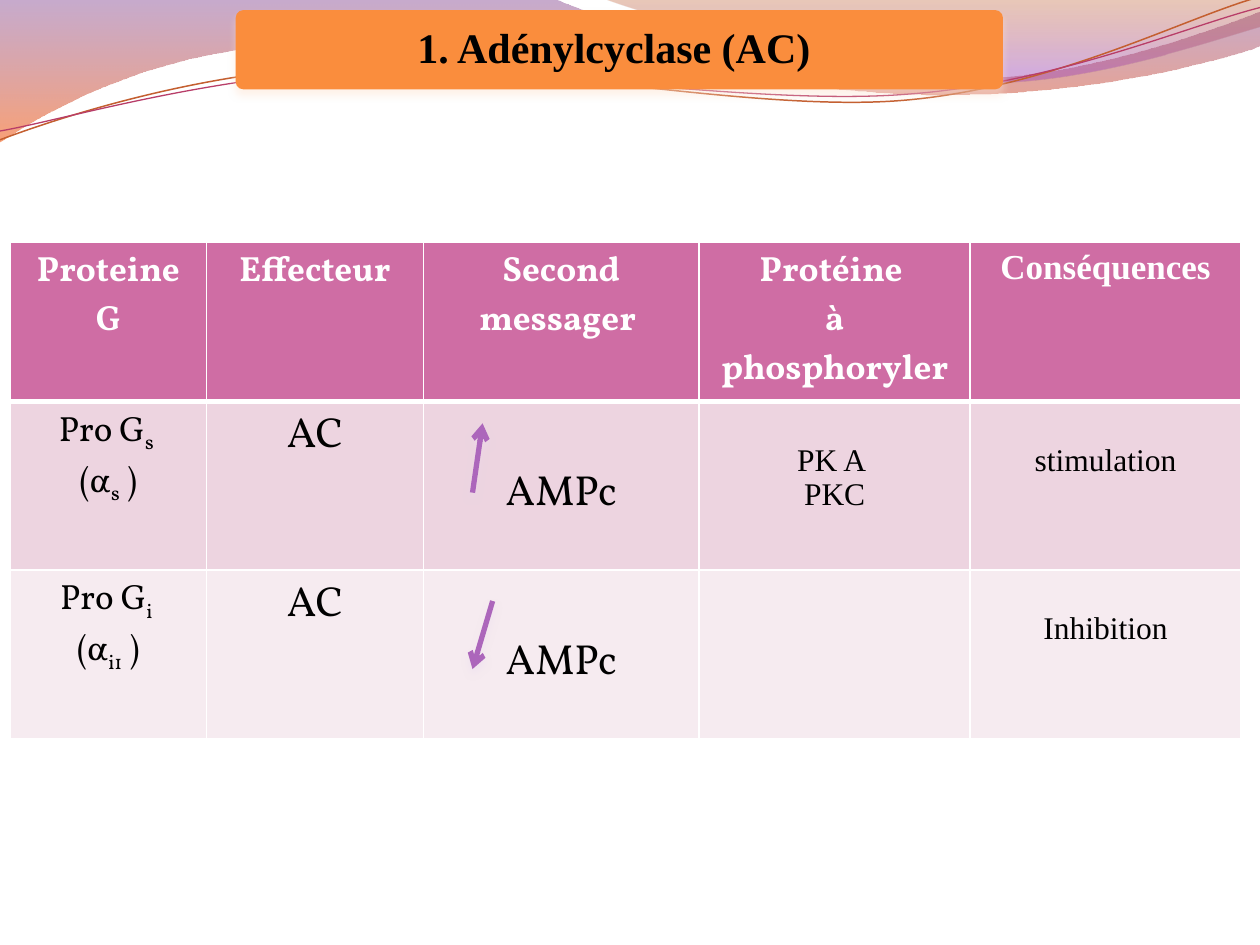
import pptx
import pptx.dml.color
import pptx.enum.shapes
import pptx.enum.text
import pptx.oxml
import pptx.oxml.ns
import pptx.util
from pptx.util import Inches

SERIF = "Times New Roman"
BOOK = "Vollkorn"
WHITE, BLACK = "FFFFFF", "000000"
NAMESPACE = pptx.oxml.ns.nsdecls("a")

LEFT_WAVE = [
    [(0, 0)], [(4.4, -0.01)],
    [(4.76, 0.17), (6.64, 0.63), (7.58, 0.63)],
    [(8.53, 0.63), (9.58, 0.26), (10, 0.09)],
    [(10.01, 0.36)],
    [(9.83, 0.44), (8.7, 0.76), (7.46, 0.75)],
    [(6.22, 0.75), (3.82, 0.28), (2.57, 0.34)],
    [(1.29, 0.36), (0.46, 0.83), (-0.01, 1.13)],
    [(0, 0)],
]
RIGHT_WAVE = [
    [(4.79, -0.01)],
    [(5.09, 0.11), (6.82, 0.62), (7.69, 0.65)],
    [(8.56, 0.69), (9.61, 0.32), (10, 0.21)],
    [(10, 0)], [(4.79, -0.01)],
]
ORANGE_CURVE = [
    [(0, 1.11)],
    [(0.48, 0.93), (1.58, 0.57), (2.77, 0.52)],
    [(3.95, 0.47), (5.93, 0.89), (7.13, 0.8)],
    [(8.33, 0.71), (9.38, 0.15), (9.98, -0.02)],
]
PINK_CURVE = [
    [(0, 1.04)],
    [(0.47, 0.96), (1.64, 0.61), (2.83, 0.56)],
    [(4.03, 0.51), (5.97, 0.84), (7.17, 0.75)],
    [(8.36, 0.67), (9.41, 0.21), (10, 0.06)],
]

COLUMN_WIDTHS = [1.56, 1.72, 2.19, 2.15, 2.15]
ROW_HEIGHTS = [1.26, 1.34, 1.34]
ROW_FILLS = ["CF6DA4", "EDD4E0", "F6EBF0"]
HEADER_FONTS = [BOOK, BOOK, BOOK, BOOK, SERIF]
BODY_STYLES = [(BOOK, 20, 0.05), (BOOK, 24, 0.05), (BOOK, 24, 0.51),
               (SERIF, 18, 0.33), (SERIF, 18, 0.33)]
TABLE_TEXT = [
    ["Proteine G", "Effecteur", "Second messager ",
     "Protéine \nà phosphoryler", "Conséquences"],
    ["Pro G_s _\n(α_s_ )", "AC", "AMPc", "PK A \nPKC", "stimulation"],
    ["Pro G_i _\n(α_i1_ )", "AC", "AMPc", "", "Inhibition"],
]


def color(value):
    return pptx.dml.color.RGBColor.from_string(value)


def add_outline(slide, segments, close):
    points = [(Inches(x), Inches(y)) for segment in segments for x, y in segment]
    builder = slide.shapes.build_freeform(*points[0])
    builder.add_line_segments(points[1:], close=close)
    shape = builder.convert_to_shape()
    shape.shadow.inherit = False
    lines = iter(list(shape._element.iter(pptx.oxml.ns.qn("a:lnTo"))))
    for segment in segments[1:]:
        corners = [next(lines) for _ in segment]
        if len(corners) == 3:
            curve = pptx.oxml.parse_xml(f"<a:cubicBezTo {NAMESPACE}/>")
            corners[0].addprevious(curve)
            for corner in corners:
                curve.append(corner[0])
                corner.getparent().remove(corner)
    return shape


def add_wave(slide, segments, stops):
    shape = add_outline(slide, segments, True)
    shape.line.fill.background()
    shape.fill.gradient()
    shape.fill.gradient_angle = 270
    for stop, (position, value, _) in zip(shape.fill.gradient_stops, stops):
        stop.position = position
        stop.color.rgb = color(value)
    elements = shape._element.spPr.iter(pptx.oxml.ns.qn("a:srgbClr"))
    for element, (_, _, opacity) in zip(elements, stops):
        element.append(pptx.oxml.parse_xml(f'<a:alpha {NAMESPACE} val="{opacity * 1000}"/>'))


def add_curve(slide, segments, value, width):
    shape = add_outline(slide, segments, False)
    shape.fill.background()
    shape.line.color.rgb = color(value)
    shape.line.width = pptx.util.Pt(width)


def add_soft_shadow(shape, value):
    properties = shape._element.spPr
    for effects in properties.findall(pptx.oxml.ns.qn("a:effectLst")):
        properties.remove(effects)
    properties.append(pptx.oxml.parse_xml(
        f'<a:effectLst {NAMESPACE}><a:outerShdw blurRad="57150" dist="38100" dir="5400000" '
        f'rotWithShape="0"><a:srgbClr val="{value}"><a:alpha val="48000"/></a:srgbClr>'
        f'</a:outerShdw></a:effectLst>'))


def add_arrow(slide, start, end):
    connector = slide.shapes.add_connector(
        pptx.enum.shapes.MSO_CONNECTOR.STRAIGHT, *map(Inches, start + end))
    connector.line.color.rgb = color("AC66BB")
    connector.line.width = pptx.util.Pt(3)
    connector.line._get_or_add_ln().append(
        pptx.oxml.parse_xml(f'<a:tailEnd {NAMESPACE} type="arrow"/>'))
    add_soft_shadow(connector, "EBDDF0")


def format_paragraph(paragraph, font_name, size, value, bold):
    paragraph.alignment = pptx.enum.text.PP_ALIGN.CENTER
    paragraph.font.name = font_name
    paragraph.font.size = pptx.util.Pt(size)
    paragraph.font.bold = bold
    paragraph.font.color.rgb = color(value)


def write_cell(cell, text, style):
    for index, line in enumerate(text.split("\n")):
        frame = cell.text_frame
        paragraph = frame.add_paragraph() if index else frame.paragraphs[0]
        for part, words in enumerate(line.split("_")):
            if words:
                run = paragraph.add_run()
                run.text = words
                if part % 2:
                    run.font._element.set("baseline", "-25000")
        format_paragraph(paragraph, *style)


def set_borders(cell, row):
    widths = {"L": 1, "R": 1, "T": 3 if row == 1 else 1, "B": 3 if row == 0 else 1}
    properties = cell._tc.get_or_add_tcPr()
    for side, width in widths.items():
        properties.append(pptx.oxml.parse_xml(
            f'<a:ln{side} {NAMESPACE} w="{width * 12700}"><a:solidFill>'
            f'<a:srgbClr val="{WHITE}"/></a:solidFill></a:ln{side}>'))


def add_protein_table(slide):
    table = slide.shapes.add_table(
        len(ROW_HEIGHTS), len(COLUMN_WIDTHS), Inches(0.08), Inches(1.92),
        Inches(sum(COLUMN_WIDTHS)), Inches(sum(ROW_HEIGHTS))).table
    table.horz_banding = False
    for column, width in zip(table.columns, COLUMN_WIDTHS):
        column.width = Inches(width)
    for row, height in enumerate(ROW_HEIGHTS):
        table.rows[row].height = Inches(height)
        for column, text in enumerate(TABLE_TEXT[row]):
            cell = table.cell(row, column)
            set_borders(cell, row)
            cell.fill.solid()
            cell.fill.fore_color.rgb = color(ROW_FILLS[row])
            if row == 0:
                style = (HEADER_FONTS[column], 20, WHITE, True)
            else:
                font_name, size, top = BODY_STYLES[column]
                cell.margin_top = Inches(top)
                style = (font_name, size, BLACK, False)
            write_cell(cell, text, style)


def add_banner(slide, text):
    banner = slide.shapes.add_shape(
        pptx.enum.shapes.MSO_SHAPE.ROUNDED_RECTANGLE,
        *map(Inches, (1.87, 0.08, 6.09, 0.63)))
    banner.adjustments[0] = 0.1
    banner.fill.solid()
    banner.fill.fore_color.rgb = color("FA8D3D")
    banner.line.fill.background()
    add_soft_shadow(banner, "FDE3D0")
    frame = banner.text_frame
    frame.text = text
    frame.word_wrap = True
    frame.vertical_anchor = pptx.enum.text.MSO_ANCHOR.MIDDLE
    frame.margin_bottom = Inches(0.1)
    format_paragraph(frame.paragraphs[0], SERIF, 24, BLACK, True)


def main():
    presentation = pptx.Presentation()
    presentation.slide_width = Inches(10)
    presentation.slide_height = Inches(7.5)
    slide = presentation.slides.add_slide(presentation.slide_layouts[6])
    add_wave(slide, LEFT_WAVE, [(0, "834591", 45), (1, "F35307", 55)])
    add_wave(slide, RIGHT_WAVE, [(0, "B74915", 30), (0.8, "A14BB4", 45)])
    add_curve(slide, ORANGE_CURVE, "C45F30", 0.85)
    add_curve(slide, PINK_CURVE, "B83D68", 0.75)
    add_protein_table(slide)
    add_arrow(slide, (3.75, 3.91), (3.83, 3.36))
    add_arrow(slide, (3.91, 4.77), (3.75, 5.31))
    add_banner(slide, "1. Adénylcyclase (AC) ")
    presentation.save("out.pptx")


if __name__ == "__main__":
    main()
